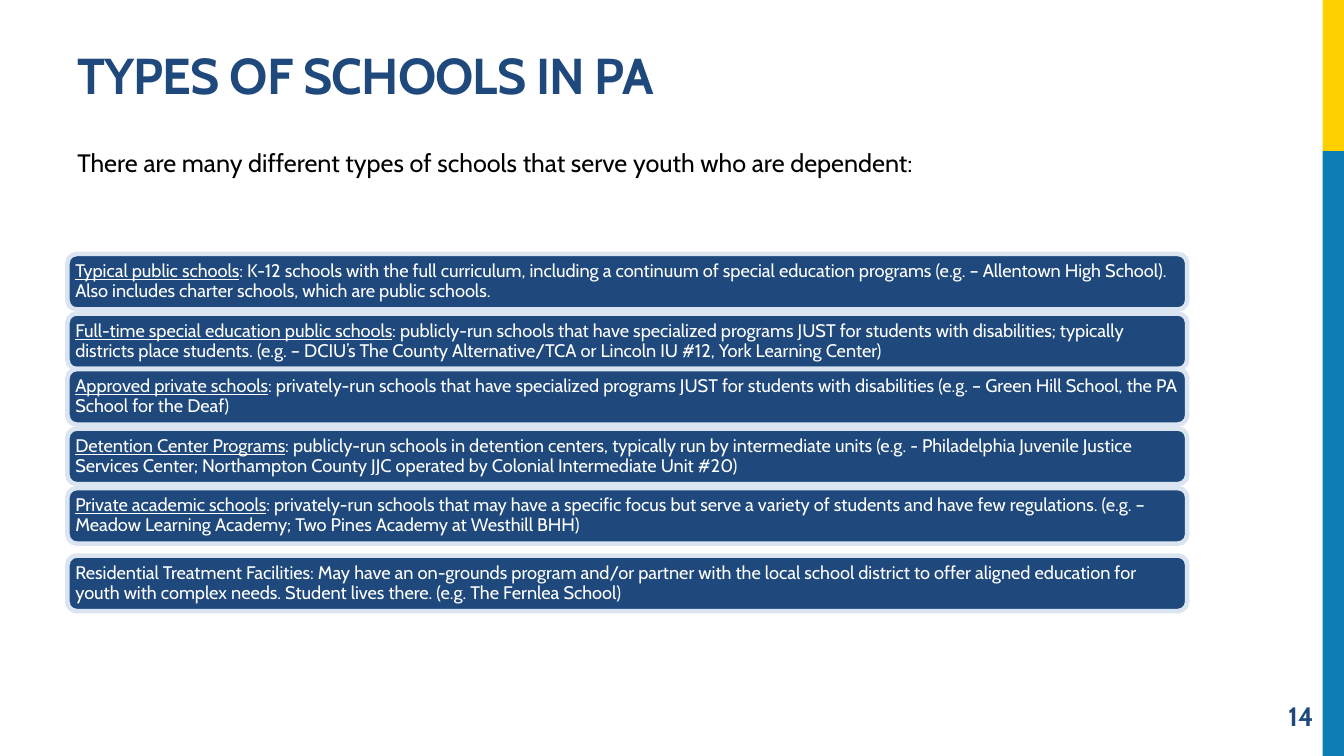
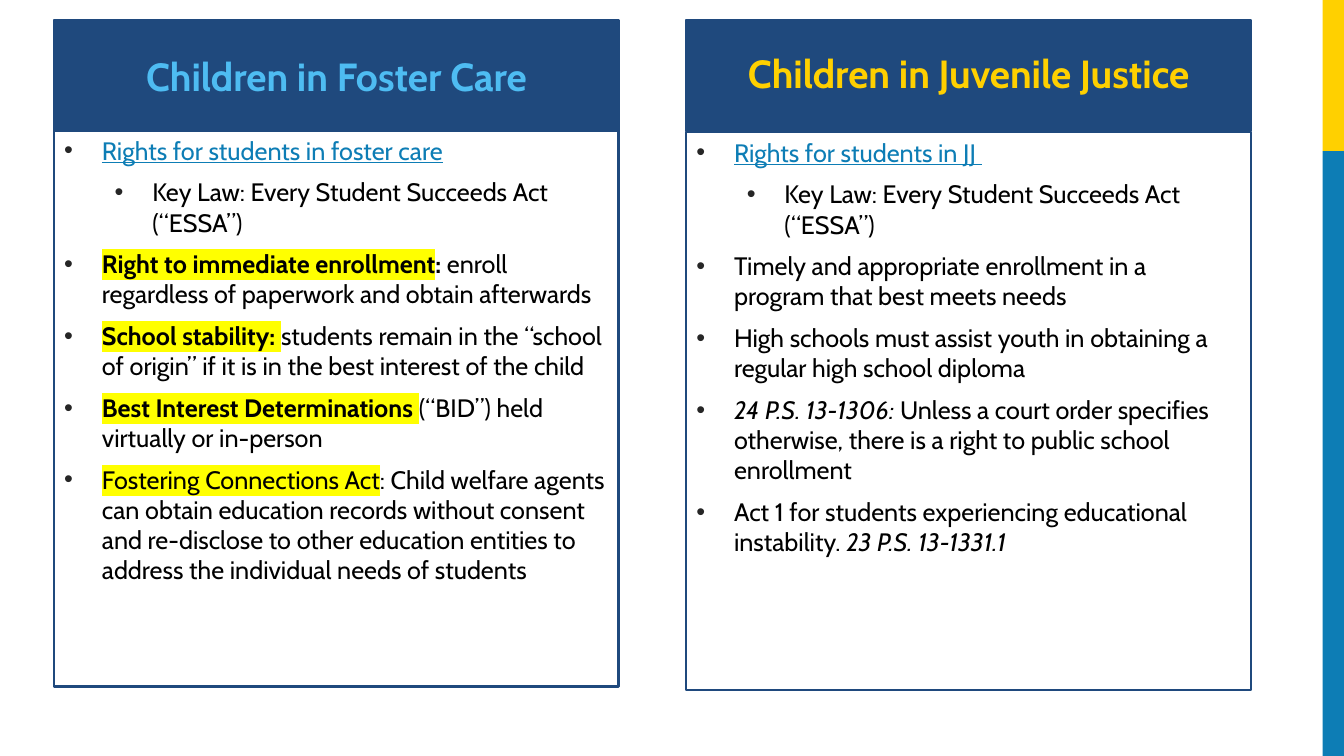
from lxml.etree import SubElement
from pptx import Presentation
from pptx.dml.color import RGBColor
from pptx.enum.shapes import MSO_SHAPE as Shape
from pptx.enum.text import MSO_ANCHOR as Anchor, PP_ALIGN as Align
from pptx.oxml import parse_xml
from pptx.oxml.ns import nsdecls, qn
from pptx.util import Cm, Pt

FONT = "Cabin"
NAVY, BLUE, SKY, GOLD = "1F497D", "0D7DB5", "4EBCF2", "FFD000"
PALE, WHITE, BLACK, BULLET, MARKER = "DBE5F1", "FFFFFF", "000000", "262626", "FFFF00"

SIDE_BANDS = [(0, 3.81, GOLD), (3.81, 15.24, BLUE)]

TITLE = "TYPES OF SCHOOLS IN PA"
INTRO = "There are many different types of schools that serve youth who are dependent:"
PAGE_NUMBER = "14"
SCHOOL_TYPES = [
    (6.4, "Typical public schools",
     ": K-12 schools with the full curriculum, including a continuum of special education programs "
     "(e.g. – Allentown High School). Also includes charter schools, which are public schools."),
    (7.9, "Full-time special education public schools",
     ": publicly-run schools that have specialized programs JUST for students with disabilities; "
     "typically districts place students. (e.g. – DCIU’s The County Alternative/TCA or "
     "Lincoln IU #12, York Learning Center)"),
    (9.3, "Approved private schools",
     ": privately-run schools that have specialized programs JUST for students with disabilities "
     "(e.g. – Green Hill School, the PA School for the Deaf)"),
    (10.8, "Detention Center Programs",
     ": publicly-run schools in detention centers, typically run by intermediate units "
     "(e.g. - Philadelphia Juvenile Justice Services Center; Northampton County JJC operated by "
     "Colonial Intermediate Unit #20)"),
    (12.3, "Private academic schools",
     ": privately-run schools that may have a specific focus but serve a variety of students and "
     "have few regulations. (e.g. – Meadow Learning Academy; Two Pines Academy at Westhill BHH)"),
    (14, "",
     "Residential Treatment Facilities: May have an on-grounds program and/or partner with the local "
     "school district to offer aligned education for youth with complex needs. Student lives there. "
     "(e.g. The Fernlea School)"),
]

HEADING_LINK = {"color": BLUE, "underline": True}
MARKED = {"highlight": MARKER}
MARKED_BOLD = {"highlight": MARKER, "bold": True}
KEY_LAW = (1, [("Key Law: Every Student Succeeds Act (“ESSA”)", {})])
PANELS = [
    {"left": 1.37, "top": 3.28, "height": 14.02, "color": SKY, "spacing": 1,
     "heading": "Children in Foster Care",
     "points": [
         (0, [("Rights for students in foster care", HEADING_LINK)]),
         KEY_LAW,
         (0, [("Right to immediate enrollment", MARKED_BOLD), (": ", {"bold": True}),
              ("enroll regardless of paperwork and obtain afterwards", {})]),
         (0, [("School stability: ", MARKED_BOLD),
              ("students remain in the “school of origin” if it is in the best interest of the child", {})]),
         (0, [("Best Interest Determinations ", MARKED_BOLD),
              ("(“BID”) held virtually or in-person", {})]),
         (0, [("Fostering Connections Act", MARKED),
              (": Child welfare agents can obtain education records without consent and re-disclose "
               "to other education entities to address the individual needs of students", {})]),
     ]},
    {"left": 17.3, "top": 3.33, "height": 14.07, "color": GOLD, "spacing": 0.9,
     "heading": "Children in Juvenile Justice",
     "points": [
         (0, [("Rights for students in JJ ", HEADING_LINK)]),
         KEY_LAW,
         (0, [("Timely and appropriate enrollment in a program that best meets needs", {})]),
         (0, [("High schools must assist youth in obtaining a regular high school diploma", {})]),
         (0, [("24 P.S. 13-1306: ", {"italic": True}),
              ("Unless a court order specifies otherwise, there is a right to public school enrollment", {})]),
         (0, [("Act 1 for students experiencing educational instability. ", {}),
              ("23 P.S. 13-1331.1", {"italic": True})]),
     ]},
]


def rgb(value):
    return RGBColor.from_string(value)


def add_run(paragraph, text, size=18, color=BLACK, bold=False, italic=False,
            underline=False, highlight=None, tracking=None):
    run = paragraph.add_run()
    run.text = text
    font = run.font
    font.name, font.size, font.bold = FONT, Pt(size), bold
    font.italic, font.underline = italic, underline
    font.color.rgb = rgb(color)
    properties = run._r.get_or_add_rPr()
    if highlight:
        properties.find(qn("a:solidFill")).addnext(parse_xml(
            f'<a:highlight {nsdecls("a")}><a:srgbClr val="{highlight}"/></a:highlight>'))
    if tracking:
        properties.set("spc", str(tracking))


def add_bullet(paragraph, level):
    properties = paragraph._p.get_or_add_pPr()
    properties.set("marL", str(Cm(0.95 + 1.27 * level)))
    properties.set("indent", str(-Cm(0.95)))
    bullet_color = SubElement(properties, qn("a:buClr"))
    SubElement(bullet_color, qn("a:srgbClr"), val=BULLET)
    SubElement(properties, qn("a:buFont"), typeface="Arial")
    SubElement(properties, qn("a:buChar"), char="•")
    paragraph.level = level


def add_box(slide, kind, place, fill=None, line=None, width=1.5):
    shape = slide.shapes.add_shape(kind, *map(Cm, place))
    shape.shadow.inherit = False
    if fill:
        shape.fill.solid()
        shape.fill.fore_color.rgb = rgb(fill)
    else:
        shape.fill.background()
    if line:
        shape.line.color.rgb = rgb(line)
        shape.line.width = Pt(width)
    else:
        shape.line.fill.background()
    return shape


def first_paragraph(shape, anchor=Anchor.TOP, align=Align.LEFT, spacing=1):
    frame = shape.text_frame
    frame.word_wrap = True
    frame.vertical_anchor = anchor
    paragraph = frame.paragraphs[0]
    paragraph.alignment = align
    paragraph.line_spacing = spacing
    return paragraph


def add_label(slide, place, text, anchor=Anchor.TOP, align=Align.LEFT, **style):
    shape = slide.shapes.add_textbox(*map(Cm, place))
    add_run(first_paragraph(shape, anchor, align), text, **style)


def new_slide(presentation):
    slide = presentation.slides.add_slide(presentation.slide_layouts[6])
    for top, height, color in SIDE_BANDS:
        add_box(slide, Shape.RECTANGLE, (33.33, top, 0.54, height), color)
    return slide


def build_school_types(presentation):
    slide = new_slide(presentation)
    add_label(slide, (1.7, 0.43, 21.44, 2.34), TITLE, Anchor.BOTTOM,
              size=36, color=NAVY, bold=True, tracking=-60)
    add_label(slide, (1.7, 3.58, 28.22, 1.02), INTRO)
    for top, name, description in SCHOOL_TYPES:
        bar = add_box(slide, Shape.ROUNDED_RECTANGLE, (1.7, top, 28.22, 1.4), NAVY, PALE, 3.25)
        frame = bar.text_frame
        frame.margin_left = frame.margin_right = Cm(0.13)
        frame.margin_top = frame.margin_bottom = Cm(0.13)
        paragraph = first_paragraph(bar, Anchor.MIDDLE, spacing=0.9)
        if name:
            add_run(paragraph, name, size=13, color=WHITE, underline=True)
        add_run(paragraph, description, size=13, color=WHITE)
    add_label(slide, (28.47, 17.53, 4.88, 1.02), PAGE_NUMBER, Anchor.MIDDLE, Align.RIGHT,
              size=19, color=NAVY, bold=True)


def build_rights(presentation):
    slide = new_slide(presentation)
    for panel in PANELS:
        left, top = panel["left"], panel["top"]
        body = add_box(slide, Shape.RECTANGLE, (left, top, 14.22, panel["height"]), line=NAVY)
        paragraph = first_paragraph(body)
        for index, (level, runs) in enumerate(panel["points"]):
            if index:
                paragraph = body.text_frame.add_paragraph()
                paragraph.alignment = Align.LEFT
                paragraph.space_before = Pt(3.6)
            paragraph.space_after = Pt(4.5)
            add_bullet(paragraph, level)
            for text, style in runs:
                add_run(paragraph, text, **style)
        header = add_box(slide, Shape.RECTANGLE, (left, 0.51, 14.22, 2.79), NAVY, NAVY)
        heading = first_paragraph(header, Anchor.MIDDLE, Align.CENTER, panel["spacing"])
        add_run(heading, panel["heading"], size=28, color=panel["color"], bold=True)


def main():
    presentation = Presentation()
    presentation.slide_width, presentation.slide_height = Cm(33.87), Cm(19.05)
    build_school_types(presentation)
    build_rights(presentation)
    presentation.save("out.pptx")


if __name__ == "__main__":
    main()
